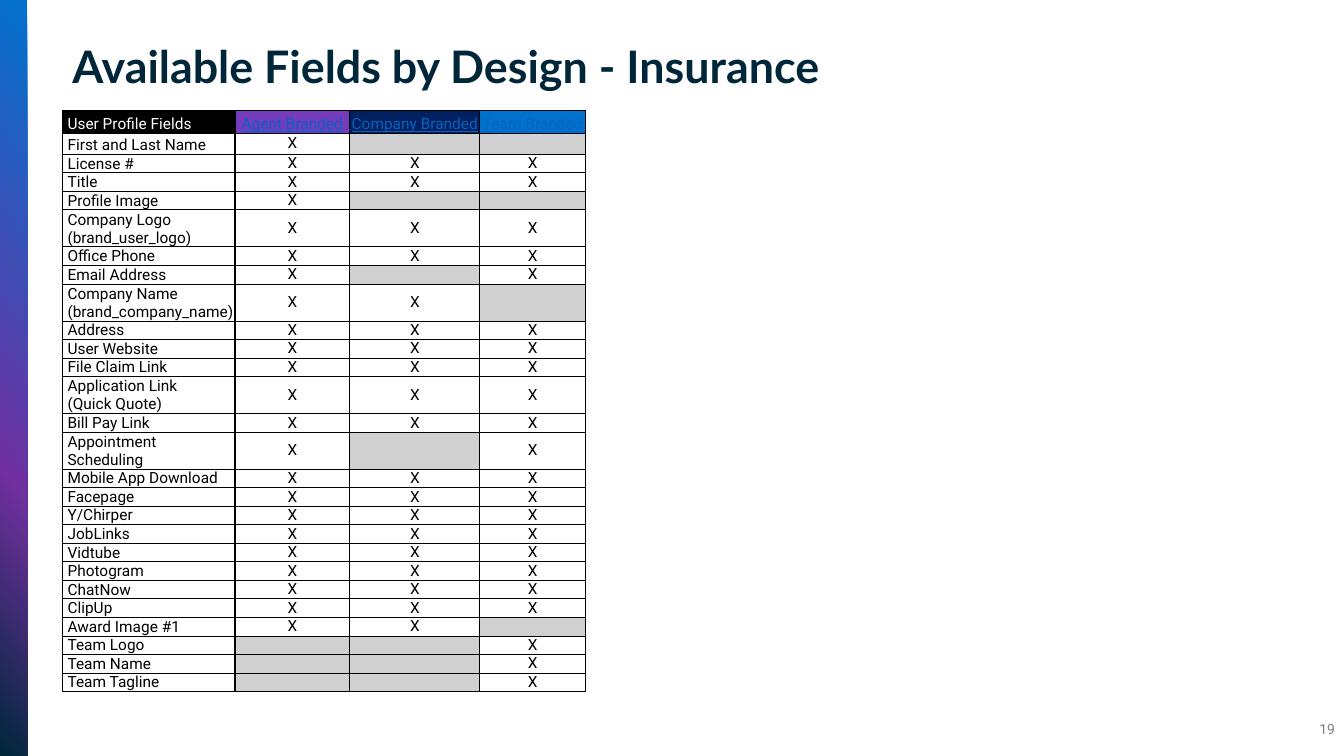
from lxml.etree import SubElement
from copy import deepcopy
from pptx import Presentation
from pptx.dml.color import RGBColor
from pptx.enum.shapes import MSO_SHAPE
from pptx.enum.text import MSO_ANCHOR, PP_ALIGN
from pptx.oxml.ns import qn
from pptx.util import Inches, Pt

TITLE = "Available Fields by Design - Insurance"
PAGE = "19"
HEADS = [
    ("User Profile Fields", "black"),
    ("Agent Branded", "violet"),
    ("Company Branded", "navy"),
    ("Team Branded", "blue"),
]
ROWS = [
    ("First and Last Name", "X--"),
    ("License #", "XXX"),
    ("Title", "XXX"),
    ("Profile Image", "X--"),
    ("Company Logo\v(brand_user_logo)", "XXX"),
    ("Office Phone", "XXX"),
    ("Email Address", "X-X"),
    ("Company Name\v(brand_company_name)", "XX-"),
    ("Address", "XXX"),
    ("User Website", "XXX"),
    ("File Claim Link", "XXX"),
    ("Application Link \v(Quick Quote)", "XXX"),
    ("Bill Pay Link", "XXX"),
    ("Appointment Scheduling", "X-X"),
    ("Mobile App Download", "XXX"),
    ("Facepage", "XXX"),
    ("Y/Chirper", "XXX"),
    ("JobLinks", "XXX"),
    ("Vidtube", "XXX"),
    ("Photogram", "XXX"),
    ("ChatNow", "XXX"),
    ("ClipUp", "XXX"),
    ("Award Image #1", "XX-"),
    ("Team Logo", "--X"),
    ("Team Name", "--X"),
    ("Team Tagline", "--X"),
]
COLORS = {
    "black": "000000", "white": "FFFFFF", "violet": "753BBD",
    "navy": "002060", "blue": "0072CE", "link": "0563C1",
    "gray": "D0D0D0", "ink": "00263A", "purple": "7030A0", "page": "808080",
}
STOPS = [("blue", 0), ("purple", 0.63), ("ink", 1)]
WIDTHS = [1.71, 1.14, 1.29, 1.05]
LINE = 0.18
TALL = {"Appointment Scheduling"}


def color(name):
    return RGBColor.from_string(COLORS[name])


def style(para, face, size, tint, align=PP_ALIGN.LEFT):
    para.alignment = align
    font = para.font
    font.name, font.size = face, Pt(size)
    font.color.rgb = color(tint)
    return font


def label(slide, text, box, face, size, tint, align, anchor):
    frame = slide.shapes.add_textbox(*map(Inches, box)).text_frame
    frame.word_wrap = True
    frame.vertical_anchor = anchor
    frame.text = text
    para = frame.paragraphs[0]
    return para, style(para, face, size, tint, align)


def border(cell, widths):
    props = cell._tc.get_or_add_tcPr()
    for side, width in zip("LRTB", widths):
        line = SubElement(props, qn("a:ln" + side), w=str(Pt(width)))
        fill = SubElement(line, qn("a:solidFill"))
        SubElement(fill, qn("a:srgbClr"), val=COLORS["black"])


def fill_cell(cell, text, back, tint, first, head, last):
    border(cell, (1, 1, 1 if head else 0.5, 1 if last else 0.5))
    cell.fill.solid()
    cell.fill.fore_color.rgb = color(back)
    cell.margin_left = Inches(0.05 if first else 0)
    cell.margin_right = cell.margin_top = cell.margin_bottom = 0
    low = first or head
    cell.vertical_anchor = MSO_ANCHOR.BOTTOM if low else MSO_ANCHOR.MIDDLE
    cell.text_frame.text = text
    para = cell.text_frame.paragraphs[0]
    font = style(para, "Roboto", 11, tint,
                 PP_ALIGN.LEFT if first else PP_ALIGN.CENTER)
    if head and not first:
        font.underline = True
    if not text:
        SubElement(para._p, qn("a:endParaRPr"), sz="1100")


def add_band(slide):
    band = slide.shapes.add_shape(
        MSO_SHAPE.RECTANGLE, 0, 0, Inches(0.27), Inches(7.5))
    band.shadow.inherit = False
    band.line.fill.background()
    fill = band.fill
    fill.gradient()
    fill.gradient_angle = 220
    stops = band._element.spPr.find(".//" + qn("a:gsLst"))
    stops.append(deepcopy(stops[-1]))
    for stop, (name, place) in zip(fill.gradient_stops, STOPS):
        stop.color.rgb = color(name)
        stop.position = place


def add_grid(slide):
    highs = [0.22, 0.21] + [
        LINE * (2 if "\v" in name or name in TALL else 1)
        for name, marks in ROWS[1:]]
    grid = slide.shapes.add_table(
        len(highs), len(WIDTHS), Inches(0.62), Inches(1.1),
        Inches(sum(WIDTHS)), Inches(sum(highs))).table
    grid.first_row = grid.horz_banding = False
    for col, width in zip(grid.columns, WIDTHS):
        col.width = Inches(width)
    for row, high in zip(grid.rows, highs):
        row.height = Inches(high)
    for c, (text, back) in enumerate(HEADS):
        fill_cell(grid.cell(0, c), text, back,
                  "link" if c else "white", c == 0, True, False)
    for r, (name, marks) in enumerate(ROWS, 1):
        for c, text in enumerate([name, *marks]):
            gap = text == "-"
            fill_cell(grid.cell(r, c), "" if gap else text,
                      "gray" if gap else "white", "black",
                      c == 0, False, r == len(ROWS))


def main():
    deck = Presentation()
    deck.slide_width, deck.slide_height = Inches(13.33), Inches(7.5)
    slide = deck.slides.add_slide(deck.slide_layouts[6])
    label(slide, PAGE, (12.71, 7.1, 0.63, 0.4), "Roboto", 10, "page",
          PP_ALIGN.RIGHT, MSO_ANCHOR.TOP)
    add_band(slide)
    para, font = label(slide, TITLE, (0.62, 0.27, 10.89, 0.83), "Lato", 32,
                       "ink", PP_ALIGN.LEFT, MSO_ANCHOR.MIDDLE)
    para.line_spacing = 0.9
    font.bold = True
    add_grid(slide)
    deck.save("out.pptx")


if __name__ == "__main__":
    main()
